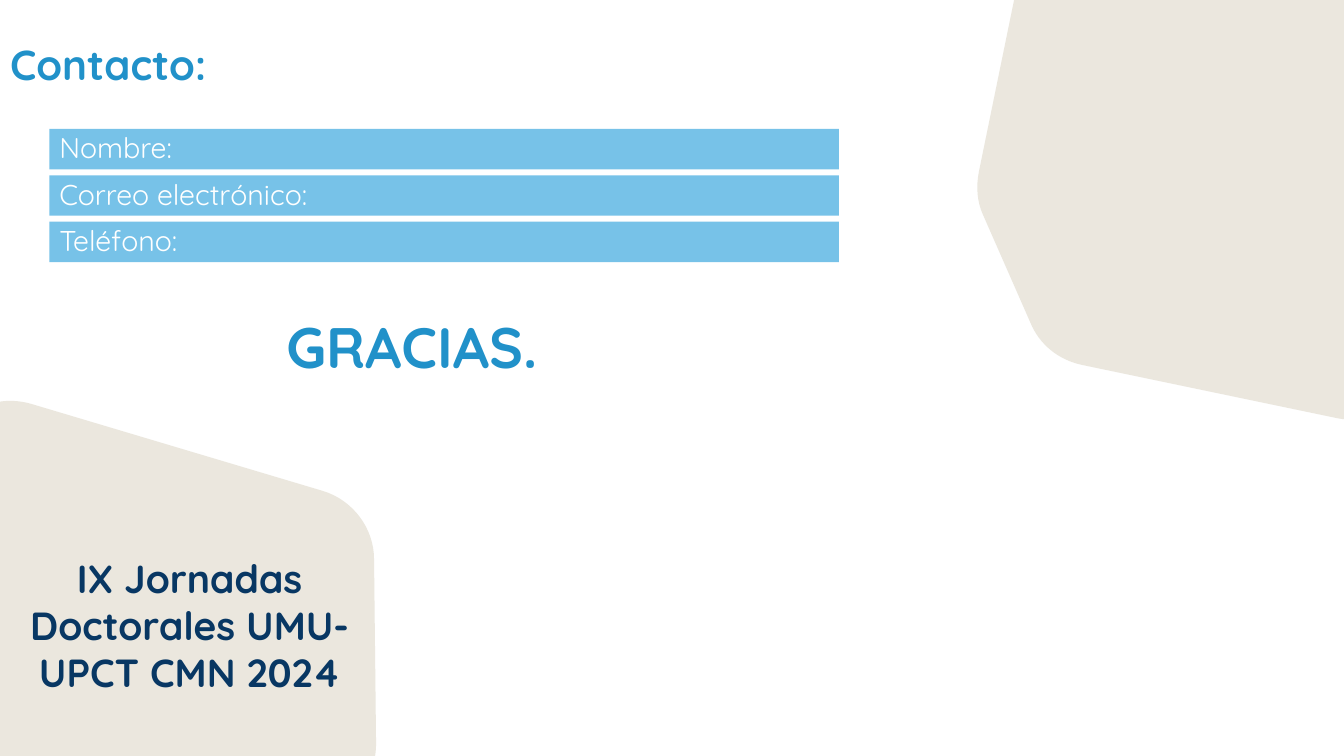
from dataclasses import dataclass

from lxml import etree
from pptx import Presentation
from pptx import util as u
from pptx.dml.color import RGBColor
from pptx.enum import shapes, text
from pptx.oxml import ns

TITLE = "Contacto:"
FIELDS = ["Nombre:", "Correo electrónico:", "Teléfono:"]
THANKS = "GRACIAS."
EVENT = "IX Jornadas Doctorales UMU-UPCT CMN 2024"

# Two values give a straight side, six give a rounded corner.
BLOBS = [
    [
        (13.94, 3.92), (15.16, 2.56),
        (15.37, 2.33, 15.4, 1.98, 15.24, 1.72), (13.69, -0.87),
        (13.59, -1.04, 13.42, -1.16, 13.22, -1.2), (11.13, -1.63),
        (10.74, -1.71, 10.36, -1.47, 10.28, -1.08), (9.71, 1.7),
        (9.68, 1.85, 9.69, 2, 9.75, 2.13), (10.22, 3.2),
        (10.31, 3.42, 10.5, 3.57, 10.73, 3.62), (13.27, 4.15),
        (13.52, 4.2, 13.78, 4.11, 13.94, 3.92),
    ],
    [
        (3.73, 7.38), (3.71, 5.55),
        (3.71, 5.24, 3.5, 4.96, 3.2, 4.87), (0.32, 4.01),
        (0.12, 3.95, -0.08, 3.97, -0.25, 4.08), (-2.1, 5.17),
        (-2.44, 5.37, -2.55, 5.8, -2.35, 6.14), (-0.9, 8.59),
        (-0.83, 8.72, -0.71, 8.82, -0.58, 8.88), (0.49, 9.36),
        (0.7, 9.45, 0.95, 9.44, 1.15, 9.32), (3.38, 8),
        (3.6, 7.87, 3.73, 7.63, 3.73, 7.38),
    ],
]


@dataclass(frozen=True)
class Theme:
    font: str = "Quicksand"
    sand: str = "E3DED1"
    sand_opacity: int = 71
    navy: str = "083763"
    blue: str = "2191C9"
    sky: str = "77C2E8"
    white: str = "FFFFFF"
    event_size: float = 28
    title_size: float = 30
    field_size: float = 20.4
    thanks_size: float = 40.7


theme = Theme()


def paint(shape, color):
    shape.shadow.inherit = False
    shape.fill.solid()
    shape.fill.fore_color.rgb = RGBColor.from_string(color)
    shape.line.fill.background()


def write(shape, words, size, color, bold=False, centered=False,
          anchor=text.MSO_ANCHOR.TOP, spacing=1.0):
    frame = shape.text_frame
    frame.word_wrap = True
    frame.auto_size = text.MSO_AUTO_SIZE.NONE
    frame.vertical_anchor = anchor
    para = frame.paragraphs[0]
    para.alignment = text.PP_ALIGN.CENTER if centered else text.PP_ALIGN.LEFT
    para.line_spacing = spacing
    span = para.add_run()
    span.text = words
    span.font.name = theme.font
    span.font.size = u.Pt(size)
    span.font.bold = bold
    span.font.color.rgb = RGBColor.from_string(color)


def add_bar(page, left, top, width, height, color):
    bar = page.shapes.add_shape(
        shapes.MSO_SHAPE.RECTANGLE, *map(u.Inches, (left, top, width, height)))
    paint(bar, color)
    return bar


def round_corners(blob, segments):
    sides = list(blob._element.iter(ns.qn("a:lnTo")))
    for side, segment in zip(sides, segments[1:]):
        if len(segment) == 2:
            continue
        side.tag = ns.qn("a:cubicBezTo")
        for index in (0, 1):
            x, y = segment[2 * index:2 * index + 2]
            point = etree.Element(ns.qn("a:pt"))
            point.set("x", str(u.Inches(x) - blob.left))
            point.set("y", str(u.Inches(y) - blob.top))
            side.insert(index, point)


def add_blob(page, segments):
    start, *others = [(u.Inches(s[-2]), u.Inches(s[-1])) for s in segments]
    builder = page.shapes.build_freeform(*start)
    builder.add_line_segments(others, close=True)
    blob = builder.convert_to_shape()
    round_corners(blob, segments)
    paint(blob, theme.sand)
    color = blob.fill._xPr.find(".//" + ns.qn("a:srgbClr"))
    alpha = etree.SubElement(color, ns.qn("a:alpha"))
    alpha.set("val", str(theme.sand_opacity * 1000))


def main():
    deck = Presentation()
    deck.slide_width, deck.slide_height = u.Inches(13.33), u.Inches(7.5)
    page = deck.slides.add_slide(deck.slide_layouts[0])
    subtitle = page.placeholders[1].element
    subtitle.getparent().remove(subtitle)

    for segments in BLOBS:
        add_blob(page, segments)

    event = page.shapes.add_textbox(*map(u.Inches, (0.17, 5.76, 3.42, 0.87)))
    write(event, EVENT, theme.event_size, theme.navy, bold=True,
          centered=True, anchor=text.MSO_ANCHOR.MIDDLE)

    title = page.shapes.title
    title.left, title.top = u.Inches(0), u.Inches(0.33)
    title.width, title.height = u.Inches(8.17), u.Inches(0.61)
    write(title, TITLE, theme.title_size, theme.blue, bold=True)

    for row, field in enumerate(FIELDS):
        bar = add_bar(page, 0.49, 1.28 + 0.46 * row, 7.83, 0.4, theme.sky)
        write(bar, field, theme.field_size, theme.white, spacing=0.9)

    thanks = add_bar(page, 0.31, 2.87, 7.55, 0.91, theme.white)
    thanks.text_frame.margin_top = u.Inches(0.3)
    write(thanks, THANKS, theme.thanks_size, theme.blue, bold=True,
          centered=True, spacing=0.9)

    deck.save("out.pptx")


if __name__ == "__main__":
    main()
